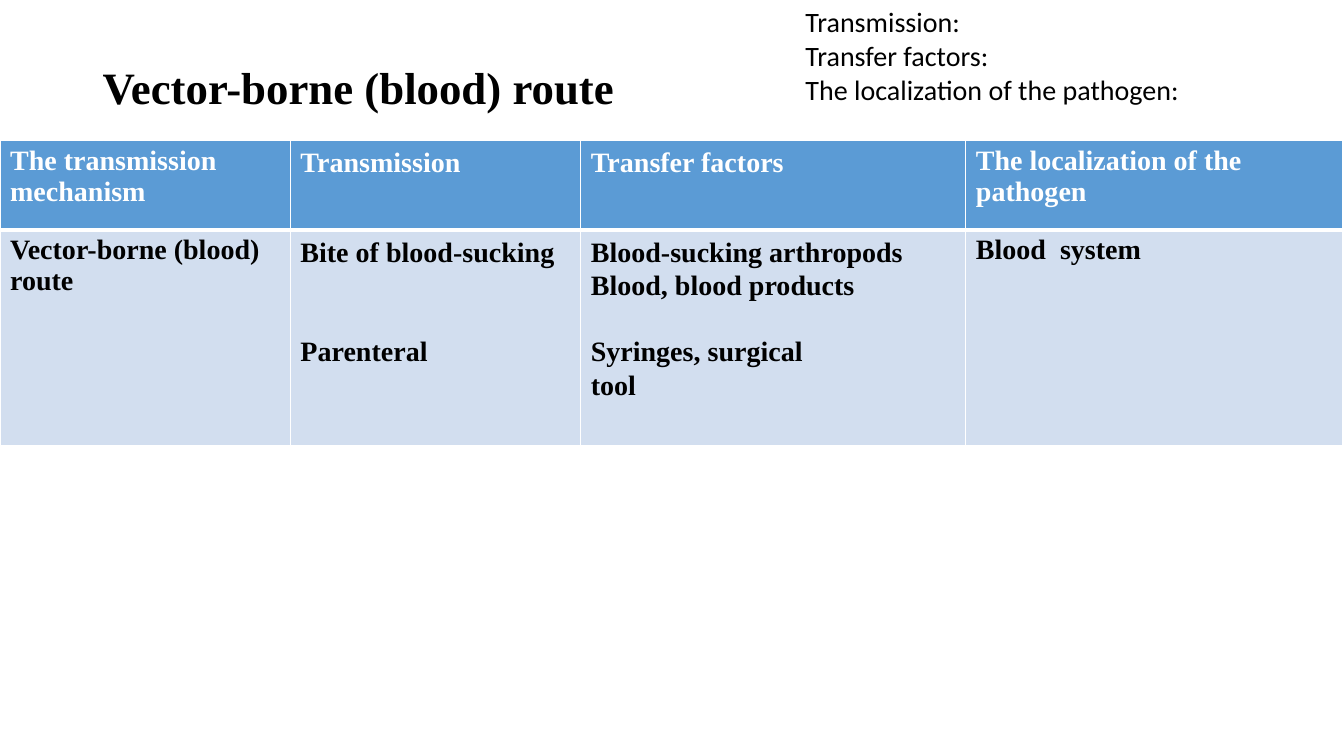
import pptx
import pptx.util
import pptx.dml.color
import pptx.enum.text
import pptx.oxml.ns
from lxml import etree

Inches, Pt = pptx.util.Inches, pptx.util.Pt
COLORS = {"text": "000000", "white": "FFFFFF", "header": "5B9BD5", "body": "D2DEEF"}
SERIF, SANS = "Times New Roman", "Calibri"


def write_run(paragraph, text, font, size, color, bold):
    run = paragraph.add_run()
    run.text = text
    run.font.name = font
    run.font.size = Pt(size)
    run.font.bold = bold
    run.font.color.rgb = pptx.dml.color.RGBColor.from_string(COLORS[color])


def add_border(cell, side, width):
    qn = pptx.oxml.ns.qn
    line = etree.SubElement(cell._tc.get_or_add_tcPr(), qn(f"a:ln{side}"), w=str(Pt(width)))
    fill = etree.SubElement(line, qn("a:solidFill"))
    etree.SubElement(fill, qn("a:srgbClr"), val=COLORS["white"])


presentation = pptx.Presentation()
presentation.slide_width = Inches(13.33)
presentation.slide_height = Inches(7.5)
slide = presentation.slides.add_slide(presentation.slide_layouts[6])

# Title
title = slide.shapes.add_textbox(Inches(0.92), Inches(0.4), Inches(11.5), Inches(1.45)).text_frame
title.word_wrap = True
title.vertical_anchor = pptx.enum.text.MSO_ANCHOR.MIDDLE
title.margin_bottom = Inches(0.51)
title.paragraphs[0].line_spacing = 0.9
write_run(title.paragraphs[0], "Vector-borne (blood) route", SERIF, 32, "text", True)

# Transmission table: each cell holds (text, space before in points) lines
rows = [
    [
        [("The transmission mechanism", 0)],
        [("Transmission", 0)],
        [("Transfer factors", 0)],
        [("The localization of the pathogen", 0)],
    ],
    [
        [("Vector-borne (blood) route", 0)],
        [("Bite of blood-sucking", 0), ("Parenteral", 47.6)],
        [("Blood-sucking arthropods", 0), ("Blood, blood products", 0),
         ("Syringes, surgical", 23.8), ("tool", 0)],
        [("Blood  system", 0)],
    ],
]
column_widths = [2.88, 2.88, 3.82, 3.74]
row_heights = [0.89, 2.14]
row_styles = [
    {"fill": "header", "text": "white", "borders": {"L": 1, "R": 1, "T": 1, "B": 3}},
    {"fill": "body", "text": "text", "borders": {"L": 1, "R": 1, "T": 3, "B": 1}},
]

routes = slide.shapes.add_table(
    len(rows), len(column_widths), Inches(0), Inches(1.39), Inches(13.33), Inches(3.03)
).table
for column, width in zip(routes.columns, column_widths):
    column.width = Inches(width)
for row, height in zip(routes.rows, row_heights):
    row.height = Inches(height)

for r, (row, style) in enumerate(zip(rows, row_styles)):
    for c, lines in enumerate(row):
        cell = routes.cell(r, c)
        for side, width in style["borders"].items():
            add_border(cell, side, width)
        cell.fill.solid()
        cell.fill.fore_color.rgb = pptx.dml.color.RGBColor.from_string(COLORS[style["fill"]])
        for i, (text, space_before) in enumerate(lines):
            paragraph = cell.text_frame.paragraphs[0] if i == 0 else cell.text_frame.add_paragraph()
            # The two middle columns are set slightly looser
            paragraph.line_spacing = 1.07 if c in (1, 2) else 1.0
            paragraph.space_before = Pt(space_before)
            write_run(paragraph, text, SERIF, 20, style["text"], True)

# Prompts at top right
prompts = slide.shapes.add_textbox(Inches(7.89), Inches(0), Inches(4.95), Inches(1.11)).text_frame
prompts.word_wrap = True
prompts.auto_size = pptx.enum.text.MSO_AUTO_SIZE.SHAPE_TO_FIT_TEXT
for i, text in enumerate(["Transmission:", "Transfer factors:", "The localization of the pathogen:"]):
    paragraph = prompts.paragraphs[0] if i == 0 else prompts.add_paragraph()
    write_run(paragraph, text, SANS, 20, "text", False)

presentation.save("out.pptx")
